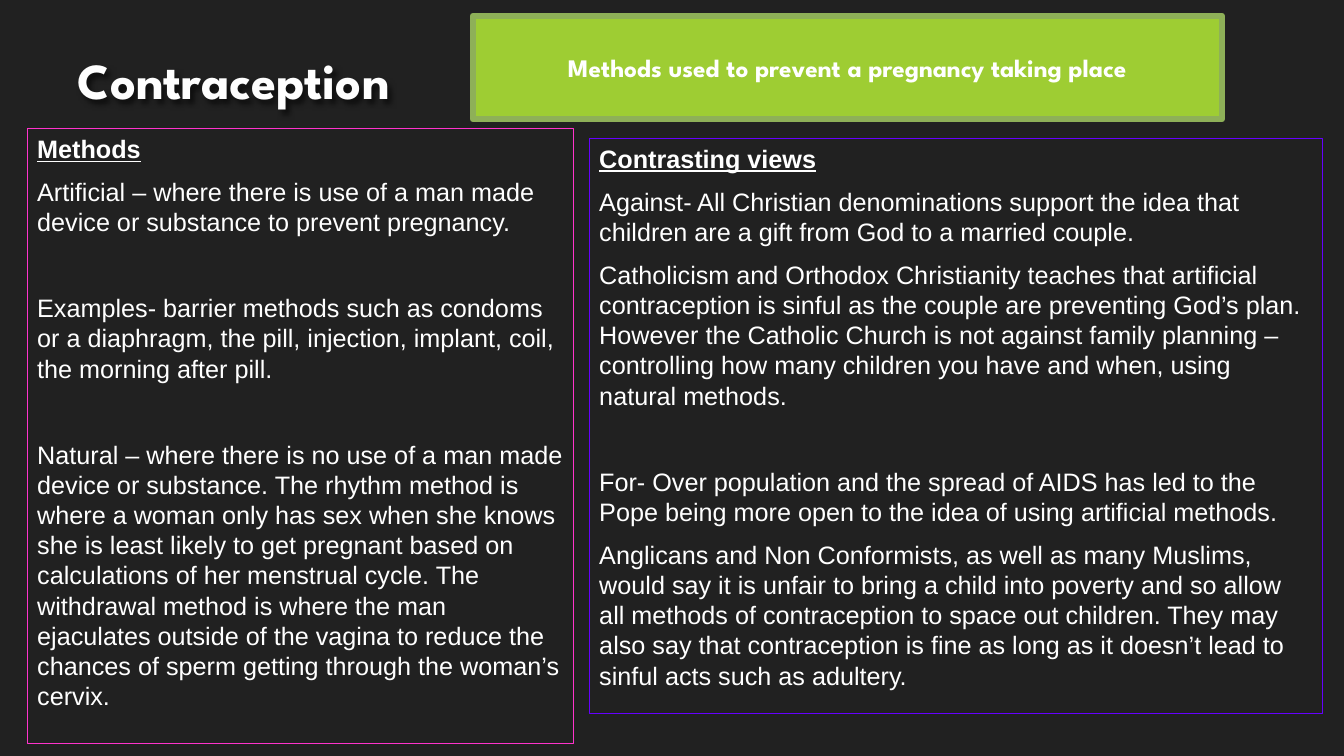
from lxml import etree
from pptx import Presentation
from pptx.dml.color import RGBColor
from pptx.enum.shapes import MSO_SHAPE
from pptx.enum.text import MSO_ANCHOR, PP_ALIGN
from pptx.oxml.ns import qn
from pptx.util import Inches, Pt

RECT = MSO_SHAPE.RECTANGLE
TOP, MIDDLE, BOTTOM = MSO_ANCHOR.TOP, MSO_ANCHOR.MIDDLE, MSO_ANCHOR.BOTTOM
LEFT, CENTER = PP_ALIGN.LEFT, PP_ALIGN.CENTER

COLORS = {
    "back": "212121", "title": "FEFEFE", "text": "FFFFFF", "shade": "000000",
    "pink": "FF33CC", "violet": "6600FF", "lime": "9ECD33", "moss": "8EB058",
}
HEAD_FONT, BODY_FONT = "League Spartan", "Arial"
SIZE = 18
GAP, BREAK = 9, 39.75  # points before a paragraph, and before a new topic

METHODS = [
    ("Artificial – where there is use of a man made device or substance to "
     "prevent pregnancy.", GAP),
    ("Examples- barrier methods such as condoms or a diaphragm, the pill, "
     "injection, implant, coil, the morning after pill.", BREAK),
    ("Natural – where there is no use of a man made device or substance. The "
     "rhythm method is where a woman only has sex when she knows she is least "
     "likely to get pregnant based on calculations of her menstrual cycle. The "
     "withdrawal method is where the man ejaculates outside of the vagina to "
     "reduce the chances of sperm getting through the woman’s cervix.", BREAK),
]
VIEWS = [
    ("Against- All Christian denominations support the idea that children are "
     "a gift from God to a married couple.", GAP),
    ("Catholicism and Orthodox Christianity teaches that artificial "
     "contraception is sinful as the couple are preventing God’s plan. However "
     "the Catholic Church is not against family planning – controlling how "
     "many children you have and when, using natural methods.", GAP),
    ("For- Over population and the spread of AIDS has led to the Pope being "
     "more open to the idea of using artificial methods.", BREAK),
    ("Anglicans and Non Conformists, as well as many Muslims, would say it is "
     "unfair to bring a child into poverty and so allow all methods of "
     "contraception to space out children. They may also say that "
     "contraception is fine as long as it doesn’t lead to sinful acts such as "
     "adultery.", GAP),
]


def rgb(name):
    return RGBColor.from_string(COLORS[name])


class Deck:
    """Holds the style and the slide; areas are percent of the slide's size."""

    def __init__(self):
        self.prs = Presentation()
        self.prs.slide_width, self.prs.slide_height = Inches(13.33), Inches(7.5)
        self.slide = self.prs.slides.add_slide(self.prs.slide_layouts[5])
        fill = self.slide.background.fill
        fill.solid()
        fill.fore_color.rgb = rgb("back")

    def area(self, left, top, width, height):
        wide, high = self.prs.slide_width / 100, self.prs.slide_height / 100
        return (round(left * wide), round(top * high),
                round(width * wide), round(height * high))

    def style(self, para, face, size, color, bold=False, align=LEFT):
        para.alignment = align
        font = para.font
        font.name, font.size, font.bold = face, Pt(size), bold
        font.color.rgb = rgb(color)

    def title(self, text, area):
        shape = self.slide.shapes.title
        shape.left, shape.top, shape.width, shape.height = self.area(*area)
        frame = shape.text_frame
        frame.text = text
        frame.vertical_anchor = BOTTOM
        self.style(frame.paragraphs[0], HEAD_FONT, 36, "title", bold=True)
        self.shade(shape)

    def shade(self, shape):
        """Give an unfilled shape's letters a soft shadow."""
        shape.fill.background()
        effects = etree.SubElement(shape._element.spPr, qn("a:effectLst"))
        shadow = etree.SubElement(effects, qn("a:outerShdw"), blurRad="50800",
                                  dist="38100", dir="2700000", algn="tl")
        color = etree.SubElement(shadow, qn("a:srgbClr"), val=COLORS["shade"])
        etree.SubElement(color, qn("a:alpha"), val="60000")

    def box(self, area, line, weight, fill=None, anchor=TOP):
        """Draw a framed rectangle and return its text frame."""
        shape = self.slide.shapes.add_shape(RECT, *self.area(*area))
        shape.shadow.inherit = False
        if fill:
            shape.fill.solid()
            shape.fill.fore_color.rgb = rgb(fill)
        else:
            shape.fill.background()
        shape.line.color.rgb = rgb(line)
        shape.line.width = Pt(weight)
        frame = shape.text_frame
        frame.word_wrap = True
        frame.vertical_anchor = anchor
        return frame

    def panel(self, heading, points, area, line):
        frame = self.box(area, line, 0.75)
        head = frame.paragraphs[0]
        head.text = heading
        self.style(head, BODY_FONT, SIZE, "text", bold=True)
        head.font.underline = True
        for text, gap in points:
            para = frame.add_paragraph()
            para.text = text
            para.space_before = Pt(gap)
            self.style(para, BODY_FONT, SIZE, "text")

    def banner(self, text, area):
        frame = self.box(area, "moss", 4.33, "lime", MIDDLE)
        para = frame.paragraphs[0]
        para.text = text
        self.style(para, HEAD_FONT, SIZE, "text", bold=True, align=CENTER)


def main():
    deck = Deck()
    deck.title("Contraception", (5.03, -1.47, 90, 16.67))
    deck.panel("Methods", METHODS, (2.03, 17, 40.66, 81.4), "pink")
    deck.panel("Contrasting views", VIEWS, (43.85, 18.27, 54.57, 76.13), "violet")
    deck.banner("Methods used to prevent a pregnancy taking place",
                (35.18, 2.1, 55.74, 13.7))
    deck.prs.save("out.pptx")


if __name__ == "__main__":
    main()
